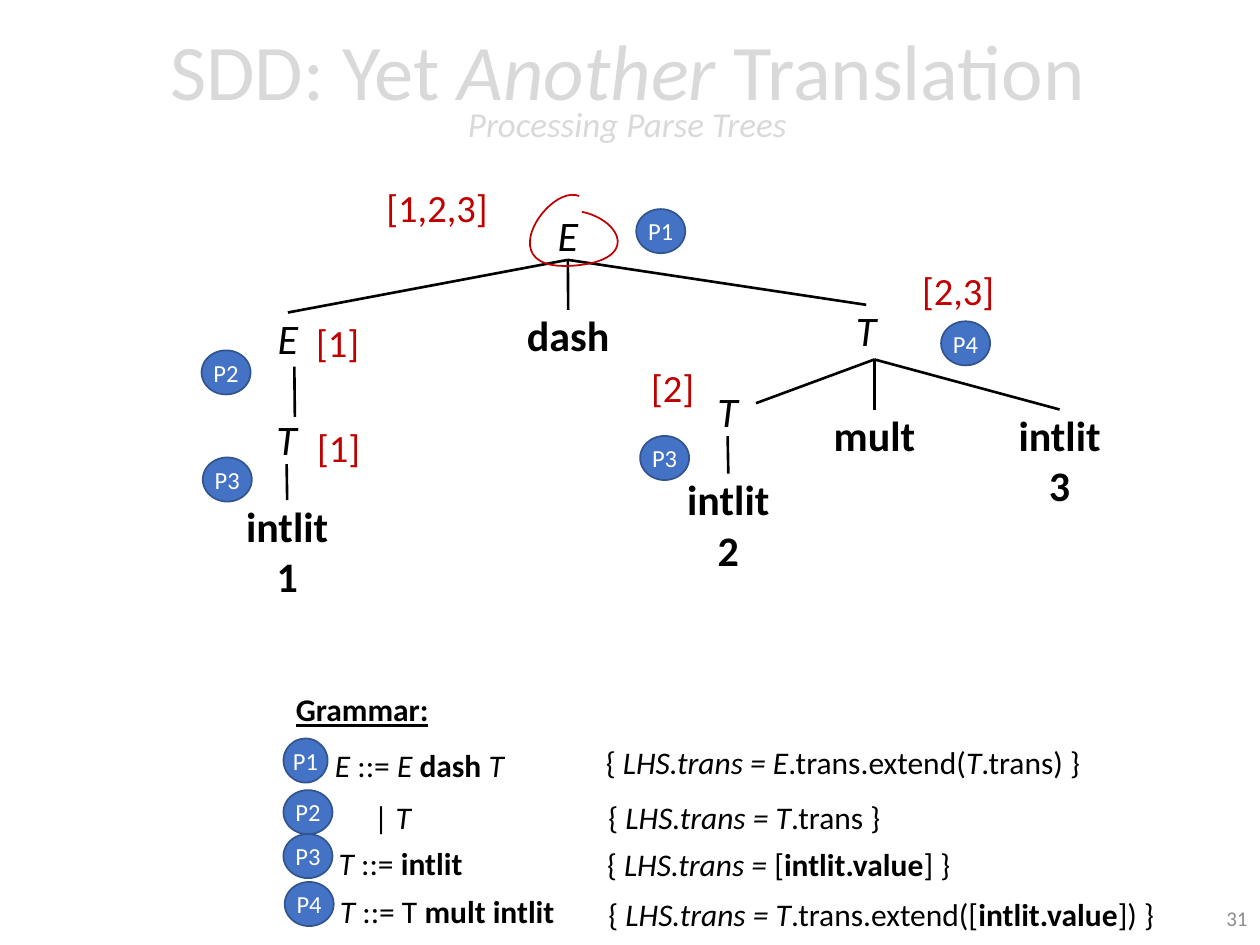
from dataclasses import dataclass

from lxml.etree import SubElement
from pptx import Presentation
from pptx.dml.color import RGBColor
from pptx.enum.shapes import MSO_CONNECTOR, MSO_SHAPE
from pptx.enum.text import MSO_ANCHOR as Anchor, MSO_AUTO_SIZE as AutoSize, PP_ALIGN as Align
from pptx.oxml.ns import qn
from pptx.util import Pt

BLACK, RED, WHITE, PALE, GRAY = "000000", "C00000", "FFFFFF", "D9D9D9", "8C8C8C"
BADGE_FILL, BADGE_LINE = "4472C4", "325491"
BOTTOM, TOP = 2, 0


@dataclass
class Node:
    lines: str
    center: float
    top: float
    bold: bool = False


@dataclass
class Branch:
    start: tuple[float, float]
    end: tuple[float, float]
    parent: str = ""
    child: str = ""


@dataclass
class Rule:
    badge_at: tuple[float, float]
    badge_width: float
    production_at: tuple[float, float]
    production: list[tuple[str, str]]
    action_at: tuple[float, float]
    action_width: float
    action: list[tuple[str, str]]


NODES = {
    "root": Node("E", 324.5, 119.5),
    "left E": Node("E", 164.5, 178.6),
    "left T": Node("T", 163.8, 236.2),
    "one": Node("intlit\n1", 164.1, 285.8, True),
    "dash": Node("dash", 324.7, 177.1, True),
    "right T": Node("T", 495, 174.2),
    "inner T": Node("T", 415.8, 220.3),
    "two": Node("intlit\n2", 416.2, 270.7, True),
    "mult": Node("mult", 499.7, 234, True),
    "three": Node("intlit\n3", 605.5, 234, True),
}
BRANCHES = [
    Branch((324.5, 148.3), (164.5, 178.6), "root", "left E"),
    Branch((324.5, 148.3), (324.7, 177.1), "root", "dash"),
    Branch((324.5, 148.3), (495, 174.2), "root", "right T"),
    Branch((168.2, 209.5), (168.5, 238.3)),
    Branch((163.8, 265), (164.1, 285.8), "left T", "one"),
    Branch((499.7, 205.4), (432, 230.4)),
    Branch((499.7, 205.4), (499.7, 234), "", "mult"),
    Branch((499.7, 205.4), (605.5, 234), "", "three"),
    Branch((415.8, 249.1), (416.2, 270.7), "inner T", "two"),
]
TRANSLATIONS = [
    ("[1,2,3]", 213.8, 101.5, 88.6), ("[2,3]", 519.8, 149, 71.3),
    ("[1]", 173.5, 178.6, 42.5), ("[1]", 174.2, 239, 42.5), ("[2]", 365, 204.5, 49),
]
TREE_BADGES = [
    ("P1", 363.6, 119.5), ("P2", 115.2, 200.2), ("P3", 115.9, 261.4),
    ("P3", 365.8, 249.1), ("P4", 537.8, 183.6),
]
RULES = [
    Rule((162, 422), 25.2, (184.3, 422.6),
         [("E ", "i"), ("::=", ""), (" E ", "i"), ("dash", "b"), (" T", "i")],
         (339.1, 421.2), 288,
         [("{ ", ""), ("LHS.trans = E", "i"), (".trans.extend(", ""), ("T", "i"), (".trans) }", "")]),
    Rule((162, 451.5), 28, (206.6, 452.2), [("|", ""), (" T", "i")],
         (340.6, 452.2), 170, [("{ ", ""), ("LHS.trans = T", "i"), (".trans }", "")]),
    Rule((162, 476.6), 28, (186.5, 478.8), [("T ", "i"), ("::= ", ""), ("intlit", "b")],
         (339.8, 479.5), 212.4,
         [("{ ", ""), ("LHS.trans = ", "i"), ("[", ""), ("intlit.value", "b"), ("] }", "")]),
    Rule((162.7, 504), 28, (187.2, 506.2), [("T ", "i"), ("::= T ", ""), ("mult intlit", "b")],
         (340.6, 507.6), 326.2,
         [("{ ", ""), ("LHS.trans = T", "i"), (".trans.extend([", ""), ("intlit.value", "b"), ("]) }", "")]),
]
CIRCLE_START = (331, 112)
CIRCLE_CURVES = [((314, 105), (281, 153), (324, 152)), ((366.5, 150.5), (356, 126), (332.5, 121))]


def rgb(value: str) -> RGBColor:
    return RGBColor.from_string(value)


def style(paragraph, size: float, color: str, align=Align.LEFT) -> None:
    paragraph.alignment = align
    font = paragraph.font
    font.name, font.size = "Calibri", Pt(size)
    font.color.rgb = rgb(color)


def add_runs(paragraph, runs: list[tuple[str, str]]) -> None:
    for text, emphasis in runs:
        run = paragraph.add_run()
        run.text = text
        if emphasis:
            run.font.italic, run.font.bold = emphasis == "i", emphasis == "b"


def add_text(slide, box: tuple, runs: list[tuple[str, str]], size: float,
             color: str = BLACK, align=Align.LEFT, wrap: bool = False):
    frame = slide.shapes.add_textbox(*map(Pt, box)).text_frame
    frame.word_wrap = wrap
    paragraph = frame.paragraphs[0]
    style(paragraph, size, color, align)
    add_runs(paragraph, runs)
    return frame


def add_node(slide, node: Node):
    lines = node.lines.split("\n")
    width = 61.9 if node.bold else 26.6
    box = (node.center - width / 2, node.top, width, 29 * len(lines))
    label = slide.shapes.add_textbox(*map(Pt, box))
    frame = label.text_frame
    frame.word_wrap = False
    frame.margin_top = frame.margin_bottom = 0
    frame.text = node.lines
    for paragraph in frame.paragraphs:
        style(paragraph, 24, BLACK, Align.CENTER)
        paragraph.font.bold, paragraph.font.italic = node.bold, not node.bold
    return label


def add_branch(slide, branch: Branch, labels: dict) -> None:
    line = slide.shapes.add_connector(MSO_CONNECTOR.STRAIGHT, *map(Pt, branch.start + branch.end))
    line.line.color.rgb = rgb(BLACK)
    line.line.width = Pt(1.5)
    SubElement(line._element.spPr, qn("a:effectLst"))
    if branch.parent:
        line.begin_connect(labels[branch.parent], BOTTOM)
    if branch.child:
        line.end_connect(labels[branch.child], TOP)


def add_badge(slide, text: str, left: float, top: float, width: float = 28) -> None:
    badge = slide.shapes.add_shape(MSO_SHAPE.OVAL, Pt(left), Pt(top), Pt(width), Pt(25.2))
    badge.shadow.inherit = False
    badge.fill.solid()
    badge.fill.fore_color.rgb = rgb(BADGE_FILL)
    badge.line.color.rgb = rgb(BADGE_LINE)
    badge.line.width = Pt(1)
    frame = badge.text_frame
    frame.margin_left = frame.margin_right = frame.margin_top = frame.margin_bottom = 0
    frame.vertical_anchor = Anchor.MIDDLE
    frame.text = text
    style(frame.paragraphs[0], 14, WHITE, Align.CENTER)


def add_hand_circle(slide, steps: int = 24) -> None:
    points, start = [], CIRCLE_START
    for first, second, end in CIRCLE_CURVES:
        for t in (step / steps for step in range(1, steps + 1)):
            weights = ((1 - t) ** 3, 3 * t * (1 - t) ** 2, 3 * t * t * (1 - t), t ** 3)
            controls = (start, first, second, end)
            points.append(tuple(Pt(sum(w * c[axis] for w, c in zip(weights, controls))) for axis in (0, 1)))
        start = end
    builder = slide.shapes.build_freeform(*map(Pt, CIRCLE_START))
    builder.add_line_segments(points, close=False)
    circle = builder.convert_to_shape()
    circle.shadow.inherit = False
    circle.fill.background()
    circle.line.color.rgb = rgb(RED)
    circle.line.width = Pt(1)


def set_title(title) -> None:
    title.left, title.top, title.width, title.height = map(Pt, (14.4, 2.2, 688.3, 104.4))
    frame = title.text_frame
    frame.auto_size, frame.vertical_anchor = AutoSize.NONE, Anchor.MIDDLE
    heading = frame.paragraphs[0]
    style(heading, 45, PALE, Align.CENTER)
    heading.line_spacing = 0.7
    add_runs(heading, [("SDD: Yet ", ""), ("Another", "i"), (" Translation", "")])
    heading.add_line_break()
    add_runs(heading, [("Processing Parse Trees", "i")])
    heading.runs[-1].font.size = Pt(20)


def main() -> None:
    """Build the slide on translating a parse tree into a list."""
    deck = Presentation()
    deck.slide_width, deck.slide_height = Pt(720), Pt(540)
    slide = deck.slides.add_slide(deck.slide_layouts[5])
    set_title(slide.shapes.title)
    labels = {key: add_node(slide, node) for key, node in NODES.items()}
    for branch in BRANCHES:
        add_branch(slide, branch, labels)
    for text, left, top, width in TRANSLATIONS:
        add_text(slide, (left, top, width, 33.8), [(text, "")], 22, RED)
    add_hand_circle(slide)
    for badge in TREE_BADGES:
        add_badge(slide, *badge)
    grammar = add_text(slide, (162, 391, 98.6, 29), [("Grammar:", "b")], 18, wrap=True)
    grammar.paragraphs[0].font.underline = True
    for number, rule in enumerate(RULES, 1):
        left, top = rule.production_at
        add_text(slide, (left, top, 535 - left, 29), rule.production, 18, wrap=True)
        add_badge(slide, f"P{number}", *rule.badge_at, rule.badge_width)
        add_text(slide, (*rule.action_at, rule.action_width, 29), rule.action, 18)
    page = add_text(slide, (558, 510.5, 162, 28.8), [("31", "")], 12, GRAY, Align.RIGHT, True)
    page.vertical_anchor = Anchor.MIDDLE
    deck.save("out.pptx")


if __name__ == "__main__":
    main()
